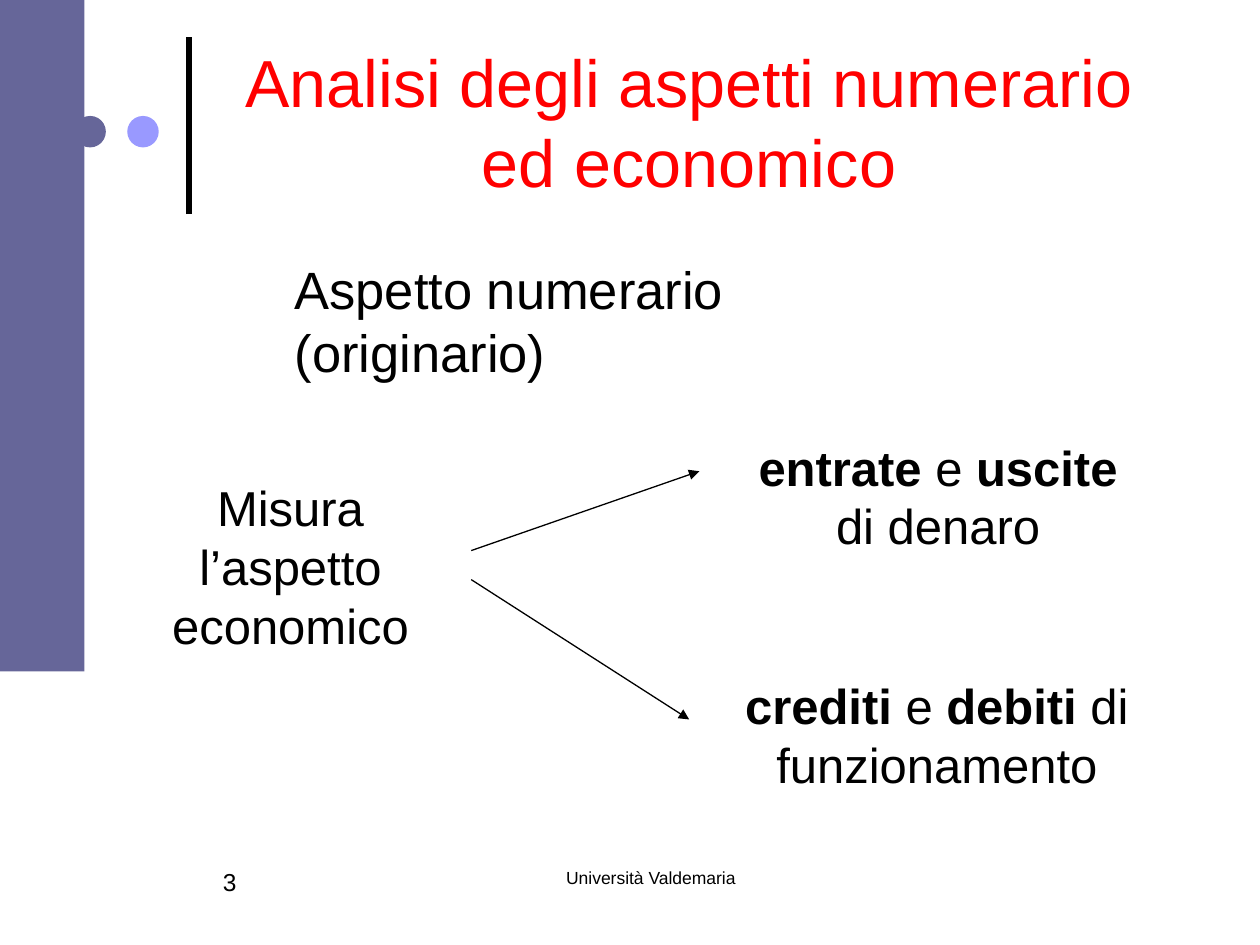
from dataclasses import dataclass
from lxml.etree import SubElement as Sub
from pptx import Presentation
from pptx.dml.color import RGBColor as Rgb
from pptx.enum.shapes import MSO_CONNECTOR as Conn, MSO_SHAPE as Kind
from pptx.enum.text import MSO_ANCHOR as Anchor, PP_ALIGN as Align
from pptx.oxml.ns import qn
from pptx.util import Inches, Pt

COLS, ROWS = 100, 75
CELL = Inches(0.1)


@dataclass(frozen=True)
class Theme:
    font: str = "Arial"
    ink: str = "000000"
    red: str = "FF0000"
    dark: str = "666699"
    light: str = "9999FF"
    title: int = 38
    head: int = 30
    body: int = 28
    page: int = 14
    foot: int = 10
    rule: float = 3
    thin: float = 0.75


@dataclass(frozen=True)
class Box:
    x: float
    y: float
    w: float
    h: float

    def area(self, x, y, w, h):
        return Box(self.x + x, self.y + y, w, h)

    def emu(self):
        return [round(v * CELL) for v in (self.x, self.y, self.w, self.h)]


THEME = Theme()


def shape(slide, kind, box, fill):
    item = slide.shapes.add_shape(kind, *box.emu())
    item.shadow.inherit = False
    item.fill.solid()
    item.fill.fore_color.rgb = Rgb.from_string(fill)
    item.line.fill.background()


def line(slide, box, width, arrow=False):
    x, y, w, h = box.emu()
    item = slide.shapes.add_connector(Conn.STRAIGHT, x, y, x + w, y + h)
    item.line.color.rgb = Rgb.from_string(THEME.ink)
    item.line.width = Pt(width)
    props = item._element.spPr
    if arrow:
        Sub(props.find(qn("a:ln")), qn("a:tailEnd"), type="triangle")
    Sub(props, qn("a:effectLst"))


def text(slide, box, rows, size, color=THEME.ink, align=Align.CENTER):
    frame = slide.shapes.add_textbox(*box.emu()).text_frame
    frame.word_wrap = True
    frame.vertical_anchor = Anchor.TOP
    for i, row in enumerate(rows):
        para = frame.add_paragraph() if i else frame.paragraphs[0]
        para.alignment = align
        for words, bold in row:
            run = para.add_run()
            run.text = words
            run.font.name = THEME.font
            run.font.size = Pt(size)
            run.font.bold = bold
            run.font.color.rgb = Rgb.from_string(color)
    return frame


def plain(*rows):
    return [[(row, False)] for row in rows]


def side(slide, box):
    line(slide, box.area(15, 17, 0, -14.1), THEME.rule)
    for x, fill in ((5.9, THEME.dark), (10.1, THEME.light)):
        shape(slide, Kind.OVAL, box.area(x, 9.2, 2.5, 2.5), fill)
    shape(slide, Kind.RECTANGLE, box.area(0, 0, 6.7, box.h), THEME.dark)


def header(slide, box):
    text(slide, box.area(0, 0, box.w, 11.2),
         plain("Analisi degli aspetti numerario ed economico"),
         THEME.title, THEME.red)
    frame = text(slide, box.area(6.3, 17.1, 57, 6),
                 plain("Aspetto numerario (originario)"),
                 THEME.head, align=Align.LEFT)
    frame.margin_right = Inches(0.2)


def flow(slide, box):
    text(slide, box.area(0, 3.2, 28.1, 15),
         plain("Misura", "l’aspetto", "economico"), THEME.body)
    cash = [[("entrate ", True), ("e ", False), ("uscite", True)],
            [("di denaro", False)]]
    debt = [[("crediti ", True), ("e ", False), ("debiti ", True),
             ("di", False)], [("funzionamento", False)]]
    text(slide, box.area(48.1, 0, 34.7, 15), cash, THEME.body)
    text(slide, box.area(44.9, 18.9, 40.9, 10.3), debt, THEME.body)
    line(slide, box.area(28.4, 11.8, 17.3, 11.1), THEME.thin, True)
    line(slide, box.area(28.4, 9.5, 18.1, -6.3), THEME.thin, True)


def footer(slide, box):
    text(slide, box.area(19.1, 0, 31.7, box.h),
         plain("Università Valdemaria"), THEME.foot)
    text(slide, box.area(0, 0, 14.2, box.h), plain("3"),
         THEME.page, align=Align.LEFT)


def main():
    deck = Presentation()
    deck.slide_width, deck.slide_height = COLS * CELL, ROWS * CELL
    slide = deck.slides.add_slide(deck.slide_layouts[6])
    side(slide, Box(0, 0, 15, 53.3))
    header(slide, Box(16.1, 2.8, 77.2, 23.1))
    flow(slide, Box(9, 34.2, 85.8, 29.2))
    footer(slide, Box(16.7, 68.3, 50.8, 5))
    deck.save("out.pptx")


if __name__ == "__main__":
    main()
